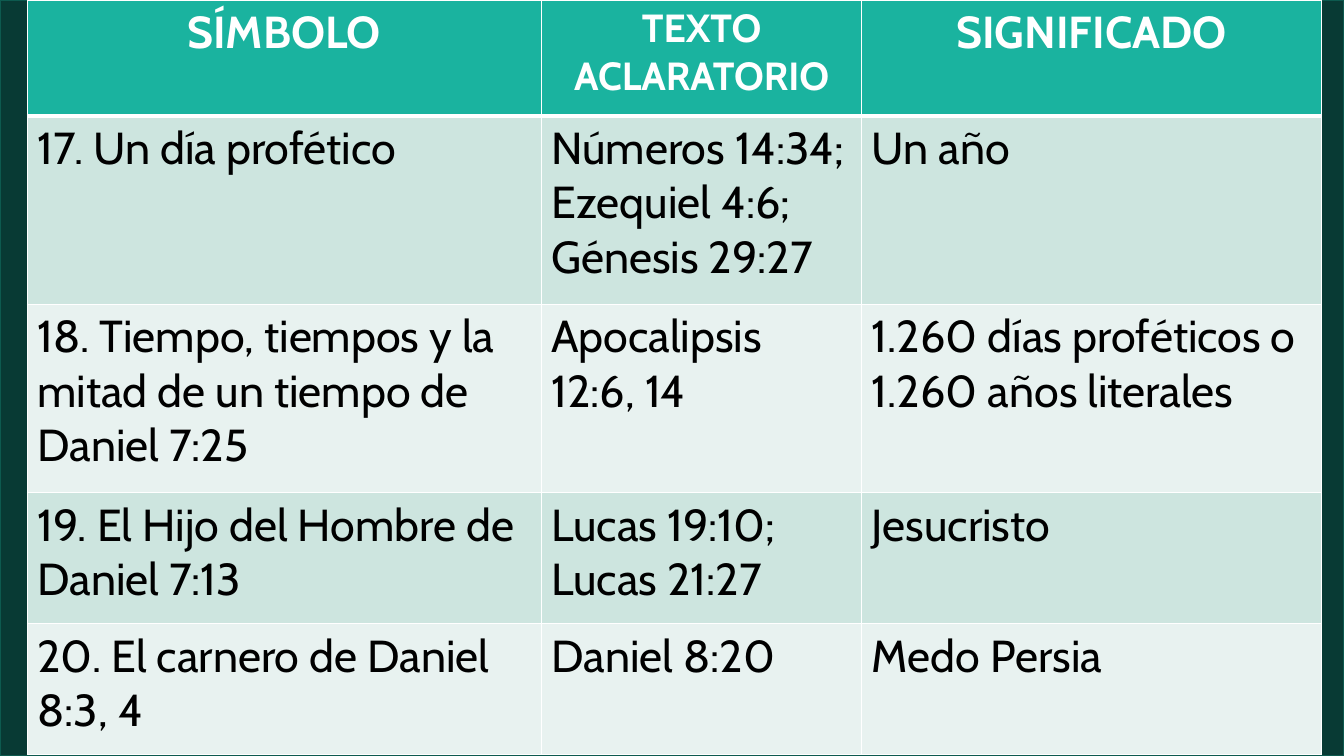
import pptx
import pptx.dml.color
import pptx.enum.shapes
import pptx.enum.text
import pptx.oxml.ns
import pptx.util
from lxml import etree
from pptx.util import Cm

FONT = "Cabin"
WHITE = "FFFFFF"
HEADER_FILL = "1AB39F"
BAND_FILLS = ("CDE5DF", "E8F2F0")
COLUMN_WIDTHS = (12.95, 8.08, 11.58)
ROW_HEIGHTS = (2.92, 4.75, 4.75, 3.3, 3.3)
HEADER_SIZES = (32, 28, 32)
BODY_SIZE = 32
ROWS = (
    ("SÍMBOLO", "TEXTO ACLARATORIO", "SIGNIFICADO"),
    ("17. Un día profético", "Números 14:34; Ezequiel 4:6; Génesis 29:27", "Un año"),
    (
        "18. Tiempo, tiempos y la mitad de un tiempo de Daniel 7:25",
        "Apocalipsis 12:6, 14",
        "1.260 días proféticos o 1.260 años literales",
    ),
    ("19. El Hijo del Hombre de Daniel 7:13", "Lucas 19:10; Lucas 21:27", "Jesucristo"),
    ("20. El carnero de Daniel 8:3, 4", "Daniel 8:20", "Medo Persia"),
)


def paint(fill, color):
    fill.solid()
    fill.fore_color.rgb = pptx.dml.color.RGBColor.from_string(color)


def add_backdrop(page, width, height):
    box = page.shapes.add_shape(
        pptx.enum.shapes.MSO_SHAPE.RECTANGLE, 0, 0, width, height
    )
    box.shadow.inherit = False
    paint(box.fill, "083A34")
    paint(box.line.fill, "0D5A4F")
    box.line.width = pptx.util.Pt(0.85)


def set_borders(cell, widths):
    qn = pptx.oxml.ns.qn
    properties = cell._tc.get_or_add_tcPr()
    for position, (side, points) in enumerate(widths.items()):
        line = etree.Element(qn(f"a:ln{side}"), w=str(pptx.util.Pt(points)))
        fill = etree.SubElement(line, qn("a:solidFill"))
        etree.SubElement(fill, qn("a:srgbClr"), val=WHITE)
        properties.insert(position, line)


def fill_cell(cell, text, size, fill, is_header):
    cell.text = text
    paint(cell.fill, fill)
    para = cell.text_frame.paragraphs[0]
    para.font.name = FONT
    para.font.size = pptx.util.Pt(size)
    para.font.bold = is_header
    paint(para.font.fill, WHITE if is_header else "000000")
    if is_header:
        para.alignment = pptx.enum.text.PP_ALIGN.CENTER


def add_symbol_table(page):
    frame = page.shapes.add_table(
        len(ROWS),
        len(COLUMN_WIDTHS),
        Cm(0.69),
        Cm(0),
        Cm(sum(COLUMN_WIDTHS)),
        Cm(sum(ROW_HEIGHTS)),
    )
    table = frame.table
    for column, width in zip(table.columns, COLUMN_WIDTHS):
        column.width = Cm(width)
    for row, height in zip(table.rows, ROW_HEIGHTS):
        row.height = Cm(height)
    for row_index, texts in enumerate(ROWS):
        is_header = row_index == 0
        fill = HEADER_FILL if is_header else BAND_FILLS[(row_index - 1) % 2]
        borders = {
            "L": 1,
            "R": 1,
            "T": 3 if row_index == 1 else 1,
            "B": 3 if is_header else 1,
        }
        for column_index, text in enumerate(texts):
            cell = table.cell(row_index, column_index)
            size = HEADER_SIZES[column_index] if is_header else BODY_SIZE
            fill_cell(cell, text, size, fill, is_header)
            set_borders(cell, borders)


def main():
    deck = pptx.Presentation()
    deck.slide_width = Cm(33.87)
    deck.slide_height = Cm(19.05)
    page = deck.slides.add_slide(deck.slide_layouts[6])
    paint(page.background.fill, "002060")
    add_backdrop(page, deck.slide_width, deck.slide_height)
    add_symbol_table(page)
    deck.save("out.pptx")


if __name__ == "__main__":
    main()
